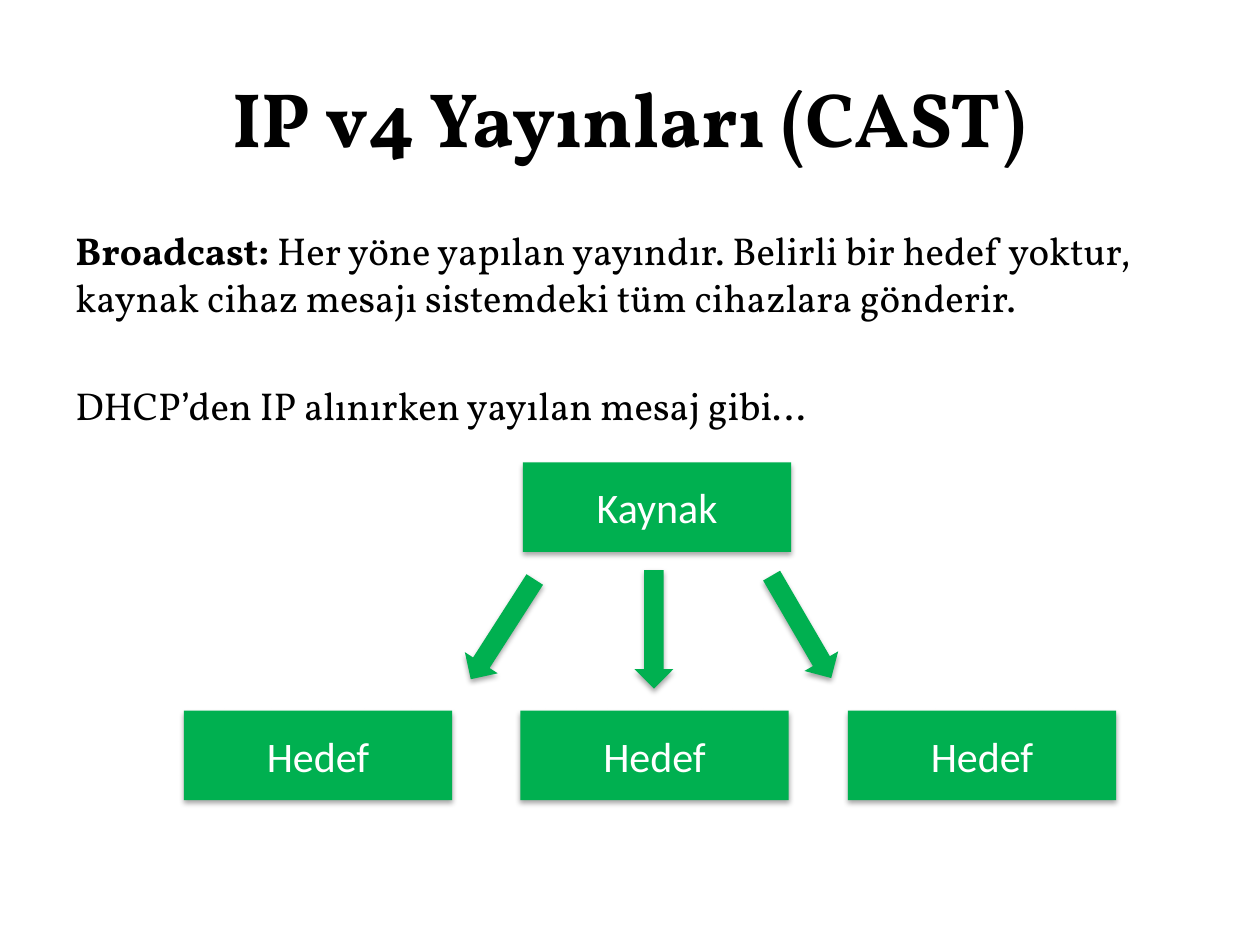
import pptx
import pptx.util
import pptx.dml.color
import pptx.enum.shapes
import pptx.enum.text
import pptx.oxml

COLORS = {"green": "00B050", "white": "FFFFFF", "black": "000000"}
SHADOW = (
    '<a:effectLst xmlns:a="http://schemas.openxmlformats.org/drawingml/2006/main">'
    '<a:outerShdw blurRad="39400" dist="22900" dir="5400000" rotWithShape="0">'
    f'<a:srgbClr val="{COLORS["black"]}"><a:alpha val="35000"/></a:srgbClr>'
    '</a:outerShdw></a:effectLst>'
)
SHAPES = pptx.enum.shapes.MSO_SHAPE
CENTER = pptx.enum.text.PP_ALIGN.CENTER
MIDDLE = pptx.enum.text.MSO_ANCHOR.MIDDLE

prs = pptx.Presentation()
prs.slide_width = pptx.util.Inches(10)
prs.slide_height = pptx.util.Inches(7.5)
s = prs.slides.add_slide(prs.slide_layouts[6])
COL = prs.slide_width / 100
ROW = prs.slide_height / 75


def style(r, font, size, color, bold=False):
    r.font.name = font
    r.font.size = pptx.util.Pt(size)
    r.font.bold = bold
    r.font.color.rgb = pptx.dml.color.RGBColor.from_string(COLORS[color])


def add_green(kind, x, y, w, h):
    sp = s.shapes.add_shape(kind, int(x * COL), int(y * ROW), int(w * COL), int(h * ROW))
    sp.fill.solid()
    sp.fill.fore_color.rgb = pptx.dml.color.RGBColor.from_string(COLORS["green"])
    sp.line.fill.background()
    sp.element.spPr.append(pptx.oxml.parse_xml(SHADOW))
    return sp


title = s.shapes.add_textbox(int(5 * COL), int(3 * ROW), int(90 * COL), int(12.5 * ROW))
tf = title.text_frame
tf.word_wrap = True
tf.vertical_anchor = MIDDLE
tf.text = "IP v4 Yayınları (CAST)"
tf.paragraphs[0].alignment = CENTER
style(tf.paragraphs[0].runs[0], "Vollkorn", 44, "black", True)

body = s.shapes.add_textbox(int(5 * COL), int(17.5 * ROW), int(90 * COL), int(17.6 * ROW))
tf = body.text_frame
tf.word_wrap = True
paragraphs = [
    [("Broadcast: ", True),
     ("Her yöne yapılan yayındır. Belirli bir hedef yoktur, "
      "kaynak cihaz mesajı sistemdeki tüm cihazlara gönderir.", False)],
    [("DHCP’den IP alınırken yayılan mesaj gibi…", False)],
]
for i, runs in enumerate(paragraphs):
    p = tf.add_paragraph() if i else tf.paragraphs[0]
    p.space_before = pptx.util.Pt(35 * i)
    for text, bold in runs:
        r = p.add_run()
        r.text = text
        style(r, "Vollkorn", 22.2, "black", bold)

boxes = [("Kaynak", 41.5, 36.7)] + [("Hedef", x, 56.4) for x in (14.6, 41.3, 67.3)]
for text, x, y in boxes:
    sp = add_green(SHAPES.RECTANGLE, x, y, 21.3, 7.1)
    tf = sp.text_frame
    tf.vertical_anchor = MIDDLE
    tf.text = text
    tf.paragraphs[0].alignment = CENTER
    style(tf.paragraphs[0].runs[0], "Calibri", 24, "white")

for x, y, angle in [(35.2, 48.4, 122.7), (47.2, 48.4, 90), (58.9, 48.2, 59.8)]:
    sp = add_green(SHAPES.RIGHT_ARROW, x, y, 9.4, 3.1)
    sp.rotation = angle

prs.save("out.pptx")
